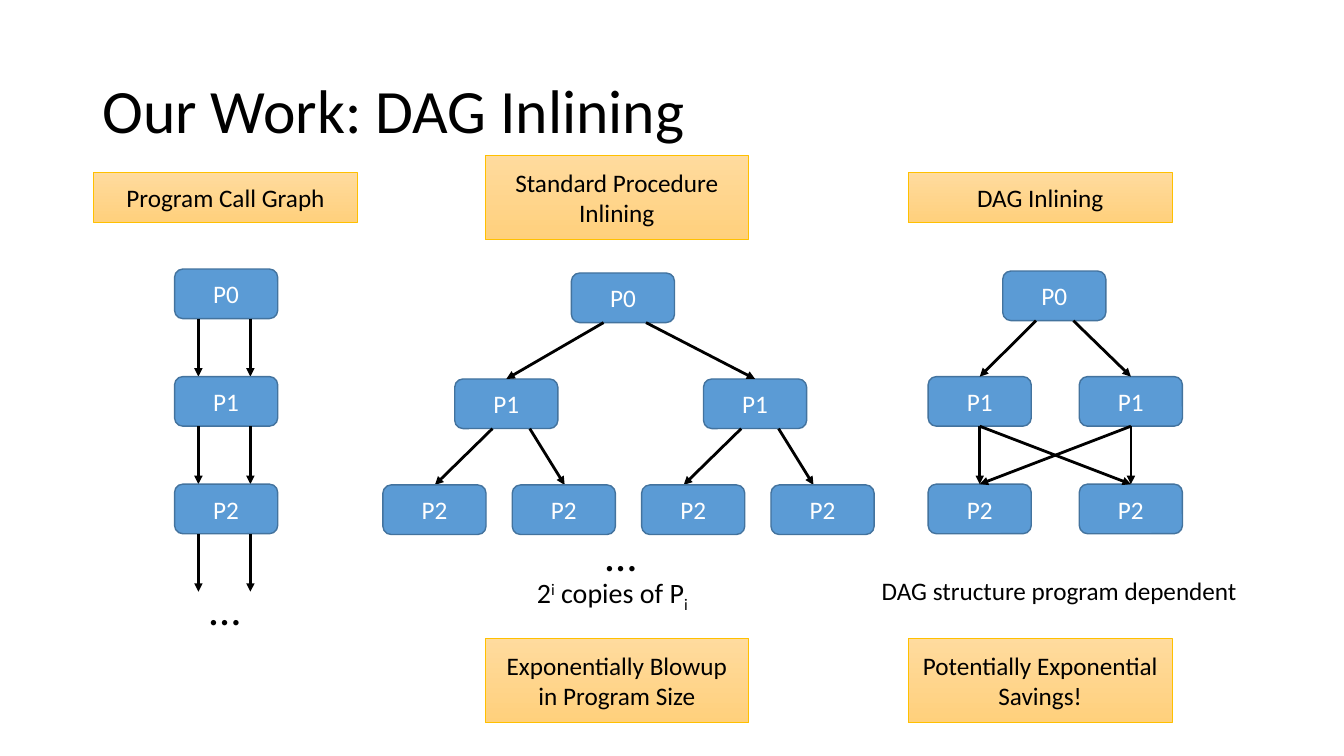
from itertools import product

from lxml import etree
from pptx import Presentation
from pptx.dml.color import RGBColor
from pptx.enum.shapes import MSO_CONNECTOR, MSO_SHAPE
from pptx.enum.text import MSO_ANCHOR, MSO_AUTO_SIZE, PP_ALIGN
from pptx.oxml.ns import qn
from pptx.util import Cm, Pt

STRAIGHT = MSO_CONNECTOR.STRAIGHT
RECTANGLE, ROUNDED = MSO_SHAPE.RECTANGLE, MSO_SHAPE.ROUNDED_RECTANGLE
MIDDLE = MSO_ANCHOR.MIDDLE
NO_FIT, GROW = MSO_AUTO_SIZE.NONE, MSO_AUTO_SIZE.SHAPE_TO_FIT_TEXT
LEFT, CENTER = PP_ALIGN.LEFT, PP_ALIGN.CENTER

BLACK = RGBColor(0x00, 0x00, 0x00)
WHITE = RGBColor(0xFF, 0xFF, 0xFF)
BLUE = RGBColor(0x5B, 0x9B, 0xD5)
BLUE_EDGE = RGBColor(0x43, 0x73, 0x9E)
GOLD_TOP = RGBColor(0xFF, 0xDB, 0x9E)
GOLD_BOTTOM = RGBColor(0xFF, 0xD0, 0x7C)
GOLD_EDGE = RGBColor(0xFF, 0xC0, 0x00)

NODE_WIDTH, NODE_HEIGHT = 2.6, 1.25
BANNER_WIDTH = 6.65
ONE_LINE, TWO_LINES = 1.27, 2.13


class DiagramPage:
    """Draws on one slide; all positions are in centimetres."""

    font_name = "Calibri"

    def __init__(self, page):
        self.page = page

    def format_paragraph(self, para, size, color, align=LEFT):
        para.alignment = align
        para.font.name = self.font_name
        para.font.size = Pt(size)
        para.font.color.rgb = color

    def title(self, text, left, top, width, height):
        box = self.page.shapes.title
        box.left, box.top, box.width, box.height = map(Cm, (left, top, width, height))
        frame = box.text_frame
        frame.text = text
        frame.auto_size = NO_FIT
        frame.vertical_anchor = MIDDLE
        para = frame.paragraphs[0]
        para.line_spacing = 0.9
        self.format_paragraph(para, 44, BLACK)

    def shape(self, kind, text, bounds, color, edge, edge_width):
        box = self.page.shapes.add_shape(kind, *map(Cm, bounds))
        box.shadow.inherit = False
        box.line.color.rgb = edge
        box.line.width = Pt(edge_width)
        frame = box.text_frame
        frame.text = text
        frame.word_wrap = True
        frame.vertical_anchor = MIDDLE
        self.format_paragraph(frame.paragraphs[0], 18, color, CENTER)
        return box

    def node(self, text, left, top):
        bounds = (left, top, NODE_WIDTH, NODE_HEIGHT)
        box = self.shape(ROUNDED, text, bounds, WHITE, BLUE_EDGE, 1)
        box.fill.solid()
        box.fill.fore_color.rgb = BLUE

    def banner(self, text, left, top, height):
        bounds = (left, top, BANNER_WIDTH, height)
        box = self.shape(RECTANGLE, text, bounds, BLACK, GOLD_EDGE, 0.5)
        box.fill.gradient()
        box.fill.gradient_angle = 270
        for stop, color in zip(box.fill.gradient_stops, (GOLD_TOP, GOLD_BOTTOM)):
            stop.color.rgb = color

    def label(self, spans, left, top, width, height, size):
        """Add a line of text from (text, baseline shift in percent) pairs."""
        box = self.page.shapes.add_textbox(*map(Cm, (left, top, width, height)))
        frame = box.text_frame
        frame.word_wrap = False
        frame.auto_size = GROW
        para = frame.paragraphs[0]
        for text, shift in spans:
            span = para.add_run()
            span.text = text
            if shift:
                span._r.get_or_add_rPr().set("baseline", str(shift * 1000))
        self.format_paragraph(para, size, BLACK)

    def arrow(self, start, end):
        link = self.page.shapes.add_connector(STRAIGHT, *map(Cm, start + end))
        link.line.color.rgb = BLACK
        link.line.width = Pt(2)
        etree.SubElement(link.line._get_or_add_ln(), qn("a:tailEnd"), type="triangle")
        etree.SubElement(link._element.spPr, qn("a:effectLst"))


def draw_call_graph(diagram):
    diagram.banner("Program Call Graph", 2.36, 4.34, ONE_LINE)
    for level in range(3):
        top = 6.78 + 2.71 * level
        diagram.node(f"P{level}", 4.4, top)
        for x in (5, 6.31):
            diagram.arrow((x, top + NODE_HEIGHT), (x, top + 2.71))
    diagram.label([("…", 0)], 5.03, 14.5, 1.3, 1.62, 32)


def draw_standard_inlining(diagram):
    diagram.banner("Standard Procedure Inlining", 12.22, 3.91, TWO_LINES)
    tops = [6.88, 9.55, 12.22]
    diagram.node("P0", 14.4, tops[0])
    for start, left in ((15.21, 11.46), (16.28, 17.73)):
        diagram.node("P1", left, tops[1])
        diagram.arrow((start, tops[0] + NODE_HEIGHT), (left + NODE_WIDTH / 2, tops[1]))
        for leave, arrive in ((0.95, -0.5), (1.89, 2.77)):
            diagram.arrow((left + leave, tops[1] + NODE_HEIGHT), (left + arrive, tops[2]))
    for copy_number in range(4):
        diagram.node("P2", 9.65 + 3.26 * copy_number, tops[2])
    diagram.label([("…", 0)], 15.01, 13.16, 1.3, 1.62, 32)
    copies = [("2", 0), ("i", 30), (" copies of P", 0), ("i", -25)]
    diagram.label(copies, 13.28, 14.38, 4.37, 1.11, 20)
    diagram.banner("Exponentially Blowup in Program Size", 12.22, 16.08, TWO_LINES)


def draw_dag_inlining(diagram):
    diagram.banner("DAG Inlining", 22.89, 4.34, ONE_LINE)
    tops = [6.83, 9.49, 12.2]
    lefts = [23.39, 27.2]
    centers = [left + NODE_WIDTH / 2 for left in lefts]
    diagram.node("P0", 25.27, tops[0])
    for level, left in product((1, 2), lefts):
        diagram.node(f"P{level}", left, tops[level])
    for start, end in zip((26.11, 27.05), centers):
        diagram.arrow((start, tops[0] + NODE_HEIGHT), (end, tops[1]))
    for start, end in product(centers, centers):
        diagram.arrow((start, tops[1] + NODE_HEIGHT), (end, tops[2]))
    diagram.label([("DAG structure program dependent", 0)], 21.97, 14.38, 9.58, 1.02, 18)
    diagram.banner("Potentially Exponential Savings!", 22.89, 16.08, TWO_LINES)


def main():
    deck = Presentation()
    deck.slide_width, deck.slide_height = Cm(33.87), Cm(19.05)
    diagram = DiagramPage(deck.slides.add_slide(deck.slide_layouts[5]))
    diagram.title("Our Work: DAG Inlining", 2.33, 1.01, 29.21, 3.68)
    draw_call_graph(diagram)
    draw_standard_inlining(diagram)
    draw_dag_inlining(diagram)
    deck.save("out.pptx")


if __name__ == "__main__":
    main()
